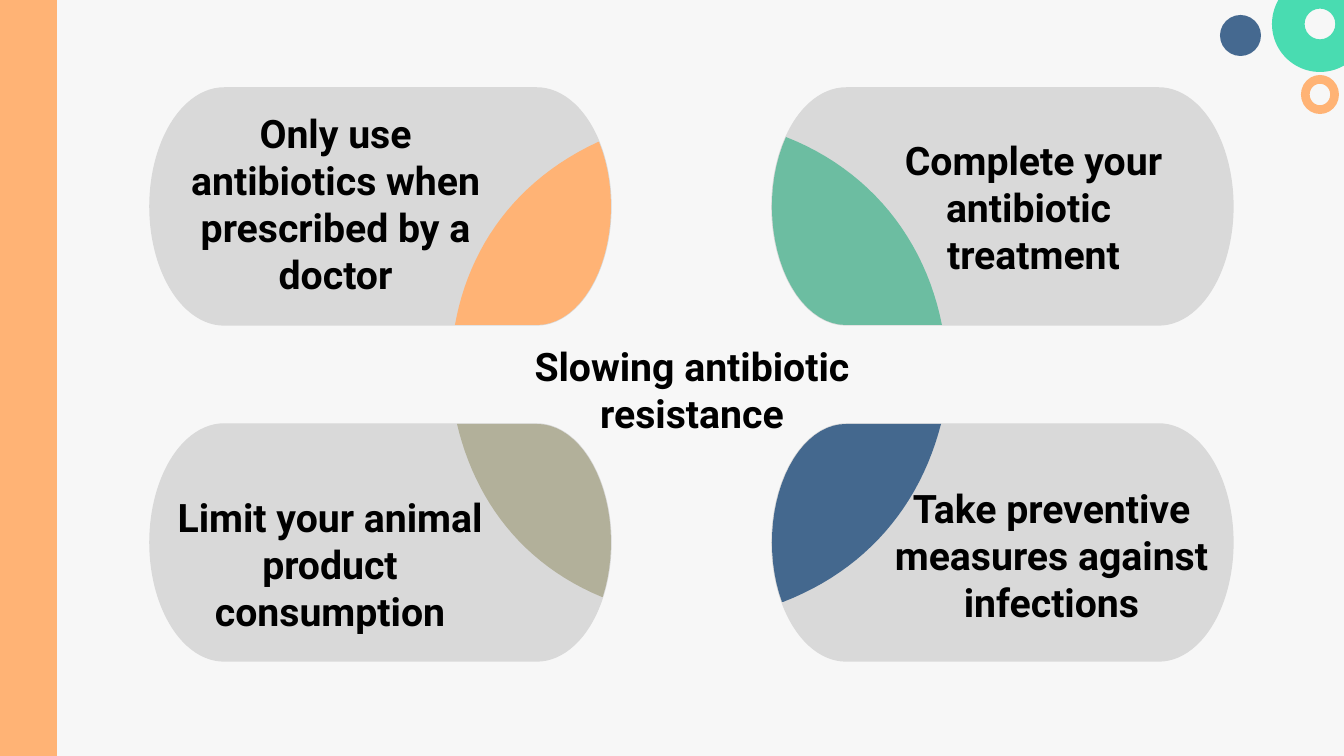
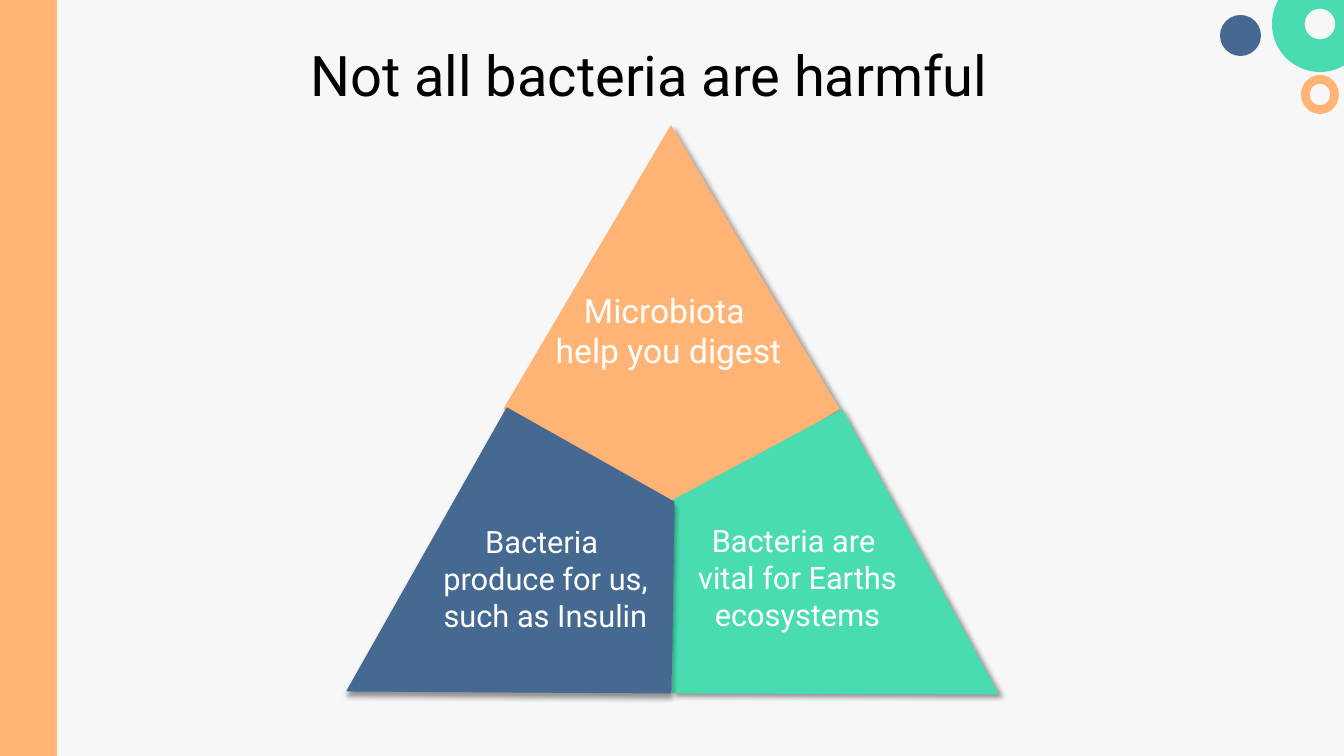
"""Build two slides on antibiotic resistance and useful bacteria."""
from math import asin, cos, pi, sin

from lxml.etree import SubElement
from pptx import Presentation
from pptx.dml.color import RGBColor
from pptx.enum.shapes import MSO_SHAPE
from pptx.enum.text import MSO_ANCHOR, MSO_AUTO_SIZE, PP_ALIGN
from pptx.oxml.ns import qn
from pptx.util import Pt

PX = 12192000 / 1344
FONT = "Roboto"
COLORS = {
    "paper": "F7F7F7",
    "ink": "000000",
    "white": "FFFFFF",
    "grey": "D9D9D9",
    "orange": "FFB375",
    "mint": "49DCB1",
    "blue": "456990",
    "deep blue": "44688E",
    "green": "6CBDA1",
    "olive": "B2B09A",
}


def paint(shape, color, line_width=0):
    """Fill a shape in one colour, with a line of that colour if it has a width."""
    shape.shadow.inherit = False
    shape.fill.solid()
    shape.fill.fore_color.rgb = RGBColor.from_string(COLORS[color])
    if line_width:
        shape.line.color.rgb = RGBColor.from_string(COLORS[color])
        shape.line.width = Pt(line_width)
    else:
        shape.line.fill.background()


def write(page, place, text, size, color, bold=False):
    """Add a centred text box and return its text frame."""
    box = page.shapes.add_textbox(*[round(length * PX) for length in place])
    frame = box.text_frame
    frame.word_wrap = True
    frame.auto_size = MSO_AUTO_SIZE.SHAPE_TO_FIT_TEXT
    frame.text = text
    for para in frame.paragraphs:
        para.alignment = PP_ALIGN.CENTER
        for span in para.runs:
            span.font.name = FONT
            span.font.size = Pt(size)
            span.font.bold = bold
            span.font.color.rgb = RGBColor.from_string(COLORS[color])
    return frame


deck = Presentation()
deck.slide_width = round(1344 * PX)
deck.slide_height = round(756 * PX)
background = deck.slide_master.background.fill
background.solid()
background.fore_color.rgb = RGBColor.from_string(COLORS["paper"])
blank = deck.slide_layouts[6]
advice_page = deck.slides.add_slide(blank)
bacteria_page = deck.slides.add_slide(blank)

for placeholder in list(blank.placeholders):
    blank.shapes.element.remove(placeholder.element)

decorations = [
    (MSO_SHAPE.RECTANGLE, (0, 0, 57, 756), "orange", None),
    (MSO_SHAPE.DONUT, (1301, 75, 38, 39), "orange", 0.23),
    (MSO_SHAPE.DONUT, (1272, -24, 96, 96), "mint", 0.34),
    (MSO_SHAPE.OVAL, (1220, 15, 41, 41), "blue", None),
]
for kind, place, color, ring in decorations:
    decoration = advice_page.shapes.add_shape(kind, *[round(length * PX) for length in place])
    paint(decoration, color)
    if ring:
        decoration.adjustments[0] = ring
    blank.shapes.element.append(decoration.element)

write(advice_page, (449, 337, 486, 105), "Slowing antibiotic resistance", 28, "ink", True)

CAPSULE_WIDTH, CAPSULE_HEIGHT = 461, 237
RIM_WIDTH, RIM_HEIGHT = 74, CAPSULE_HEIGHT / 2
STEPS = 24
capsules = [
    (772, 424, "deep blue", [(941, 424), (920, 506), (866, 570), (783, 602)],
     (859, 479, 385, 152), "Take preventive measures against infections"),
    (772, 88, "green", [(942, 325), (925, 239), (870, 170), (786, 137)],
     (834, 131, 399, 152), "Complete your antibiotic \vtreatment"),
    (150, 88, "orange", [(455, 325), (469, 247), (516, 180), (598, 142)],
     (165, 104, 341, 228), "Only use antibiotics when prescribed by a doctor"),
    (150, 424, "olive", [(457, 424), (475, 500), (522, 564), (602, 597)],
     (165, 488, 330, 179), "Limit your animal product consumption"),
]
for left, top, color, curve, text_place, text in capsules:
    place = (left, top, CAPSULE_WIDTH, CAPSULE_HEIGHT)
    capsule = advice_page.shapes.add_shape(
        MSO_SHAPE.FLOWCHART_TERMINATOR, *[round(length * PX) for length in place])
    paint(capsule, "grey", 1)

    outline = []
    for step in range(STEPS + 1):
        t = step / STEPS
        weights = ((1 - t) ** 3, 3 * t * (1 - t) ** 2, 3 * t * t * (1 - t), t ** 3)
        outline.append([sum(weight * point[axis] for weight, point in zip(weights, curve))
                        for axis in (0, 1)])
    side = 1 if left < 672 else -1
    center_x = left + CAPSULE_WIDTH - RIM_WIDTH if side == 1 else left + RIM_WIDTH
    center_y = top + RIM_HEIGHT
    start = asin((curve[-1][1] - center_y) / RIM_HEIGHT)
    end = pi / 2 if curve[0][1] > center_y else -pi / 2
    for step in range(STEPS + 1):
        angle = start + (end - start) * step / STEPS
        outline.append([center_x + side * RIM_WIDTH * cos(angle),
                        center_y + RIM_HEIGHT * sin(angle)])
    points = [(round(x * PX), round(y * PX)) for x, y in outline]
    builder = advice_page.shapes.build_freeform(*points[0])
    builder.add_line_segments(points[1:])
    paint(builder.convert_to_shape(), color)
    write(advice_page, text_place, text, 28, "ink", True)

title = write(bacteria_page, (222, 1, 854, 113), "Not all bacteria are harmful", 40, "ink")
title.auto_size = MSO_AUTO_SIZE.NONE
title.vertical_anchor = MSO_ANCHOR.BOTTOM
title.paragraphs[0].line_spacing = 0.9

kites = [
    ("orange", 45, [(671, 126), (839, 409), (671, 510), (504, 409)]),
    ("mint", 45, [(998, 694), (673, 693), (672, 501), (842, 410)]),
    ("blue", 90, [(347, 691), (671, 693), (674, 502), (507, 408)]),
]
for color, direction, corners in kites:
    builder = bacteria_page.shapes.build_freeform(*corners[0], scale=PX)
    builder.add_line_segments(corners[1:])
    kite = builder.convert_to_shape()
    paint(kite, color, 0.75)
    effects = kite.element.spPr.find(qn("a:effectLst"))
    shadow = SubElement(effects, qn("a:outerShdw"), blurRad=str(Pt(4)), dist=str(Pt(3)),
                        dir=str(direction * 60000), algn="ctr", rotWithShape="0")
    shade = SubElement(shadow, qn("a:srgbClr"), val=COLORS["ink"])
    SubElement(shade, qn("a:alpha"), val="40000")

labels = [
    ((404, 518, 283, 122), "Bacteria \nproduce for us, such as Insulin", 22),
    ((545, 285, 247, 92), "Microbiota \nhelp you digest", 24),
    ((655, 517, 285, 126), "Bacteria are \nvital for Earths ecosystems", 22),
]
for place, text, size in labels:
    write(bacteria_page, place, text, size, "white")

deck.save("out.pptx")
